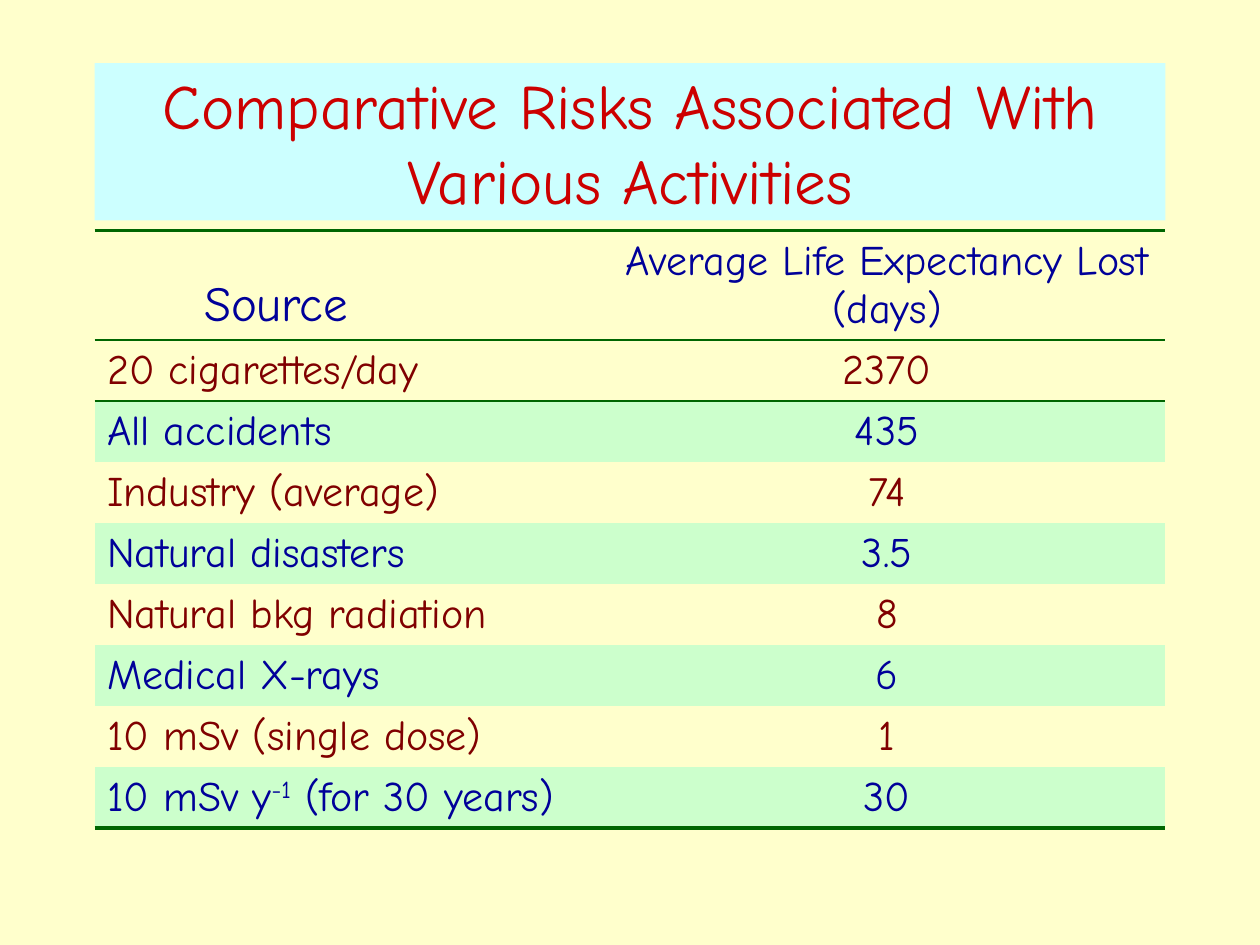
from lxml import etree
from pptx import Presentation
from pptx.dml.color import RGBColor
from pptx.enum.text import MSO_ANCHOR as Anchor, PP_ALIGN as Align
from pptx.oxml.ns import qn
from pptx.util import Inches, Pt

COLORS = {
    "background": "FFFFCC",
    "title_fill": "CCFFFF",
    "title": "CC0000",
    "blue": "000099",
    "maroon": "800000",
    "band": "CCFFCC",
    "rule": "006600",
}
NO_TABLE_STYLE = "{2D5ABB26-0587-4C30-8999-92F81FD0307C}"

RISKS = [
    ("20 cigarettes/day", "2370"),
    ("All accidents", "435"),
    ("Industry (average)", "74"),
    ("Natural disasters", "3.5"),
    ("Natural bkg radiation", "8"),
    ("Medical X-rays", "6"),
    ("10 mSv (single dose)", "1"),
    ("10 mSv y^-1^ (for 30 years)", "30"),  # carets enclose a superscript
]


def color(name):
    return RGBColor.from_string(COLORS[name])


class SlideBuilder:
    font_name = "Comic Neue"

    def __init__(self, presentation):
        self.slide = presentation.slides.add_slide(presentation.slide_layouts[5])
        background = self.slide.background.fill
        background.solid()
        background.fore_color.rgb = color("background")

    def style(self, paragraph, size, color_name, align):
        paragraph.alignment = align
        paragraph.font.name = self.font_name
        paragraph.font.size = Pt(size)
        paragraph.font.color.rgb = color(color_name)

    def title(self, text, left, top, width, height):
        shape = self.slide.shapes.title
        shape.left, shape.top = Inches(left), Inches(top)
        shape.width, shape.height = Inches(width), Inches(height)
        shape.fill.solid()
        shape.fill.fore_color.rgb = color("title_fill")
        frame = shape.text_frame
        frame.text = text
        frame.word_wrap = True
        frame.vertical_anchor = Anchor.MIDDLE
        self.style(frame.paragraphs[0], 36, "title", Align.CENTER)

    def table(self, left, top, columns, rows):
        frame = self.slide.shapes.add_table(
            len(rows), len(columns), Inches(left), Inches(top),
            Inches(sum(columns)), Inches(sum(rows)))
        table = frame.table
        table.first_row = table.horz_banding = False
        table._tbl.tblPr.find(qn("a:tableStyleId")).text = NO_TABLE_STYLE
        for column, width in zip(table.columns, columns):
            column.width = Inches(width)
        for row, height in zip(table.rows, rows):
            row.height = Inches(height)
        return table

    def cell(self, cell, text, size, color_name, align, fill=None, anchor=Anchor.TOP):
        cell.vertical_anchor = anchor
        if fill:
            cell.fill.solid()
            cell.fill.fore_color.rgb = color(fill)
        else:
            cell.fill.background()
        paragraph = cell.text_frame.paragraphs[0]
        for index, part in enumerate(text.split("^")):
            run = paragraph.add_run()
            run.text = part
            if index % 2:
                run._r.get_or_add_rPr().set("baseline", "30000")
        self.style(paragraph, size, color_name, align)

    def borders(self, cell, **widths):
        """Draw the given sides, named T and B, in that order before the fill."""
        properties = cell._tc.get_or_add_tcPr()
        for index, (side, width) in enumerate(widths.items()):
            line = etree.Element(qn("a:ln" + side), w=str(Pt(width)))
            fill = etree.SubElement(line, qn("a:solidFill"))
            etree.SubElement(fill, qn("a:srgbClr"), val=COLORS["rule"])
            properties.insert(index, line)


def main():
    presentation = Presentation()
    presentation.slide_width, presentation.slide_height = Inches(10), Inches(7.5)
    builder = SlideBuilder(presentation)

    builder.title("Comparative Risks Associated With Various Activities",
                  0.75, 0.5, 8.5, 1.25)

    # Table header
    table = builder.table(0.75, 1.83, [4.08, 4.42], [0.87] + [0.48] * len(RISKS))
    source, days = table.rows[0].cells
    builder.cell(source, "Source", 28, "blue", Align.LEFT, anchor=Anchor.BOTTOM)
    source.margin_left = Inches(0.87)
    builder.cell(days, "Average Life Expectancy Lost (days)", 24, "blue",
                 Align.CENTER, anchor=Anchor.BOTTOM)

    # Alternating risk rows
    for number, risk in enumerate(RISKS, start=1):
        text_color, fill = ("maroon", None) if number % 2 else ("blue", "band")
        for cell, text, align in zip(table.rows[number].cells, risk,
                                     (Align.LEFT, Align.CENTER)):
            builder.cell(cell, text, 24, text_color, align, fill)

    # Horizontal rules
    for column in range(2):
        builder.borders(table.cell(0, column), T=2.25, B=1)
        builder.borders(table.cell(1, column), T=1)
        builder.borders(table.cell(len(RISKS), column), B=2.25)

    presentation.save("out.pptx")


if __name__ == "__main__":
    main()
